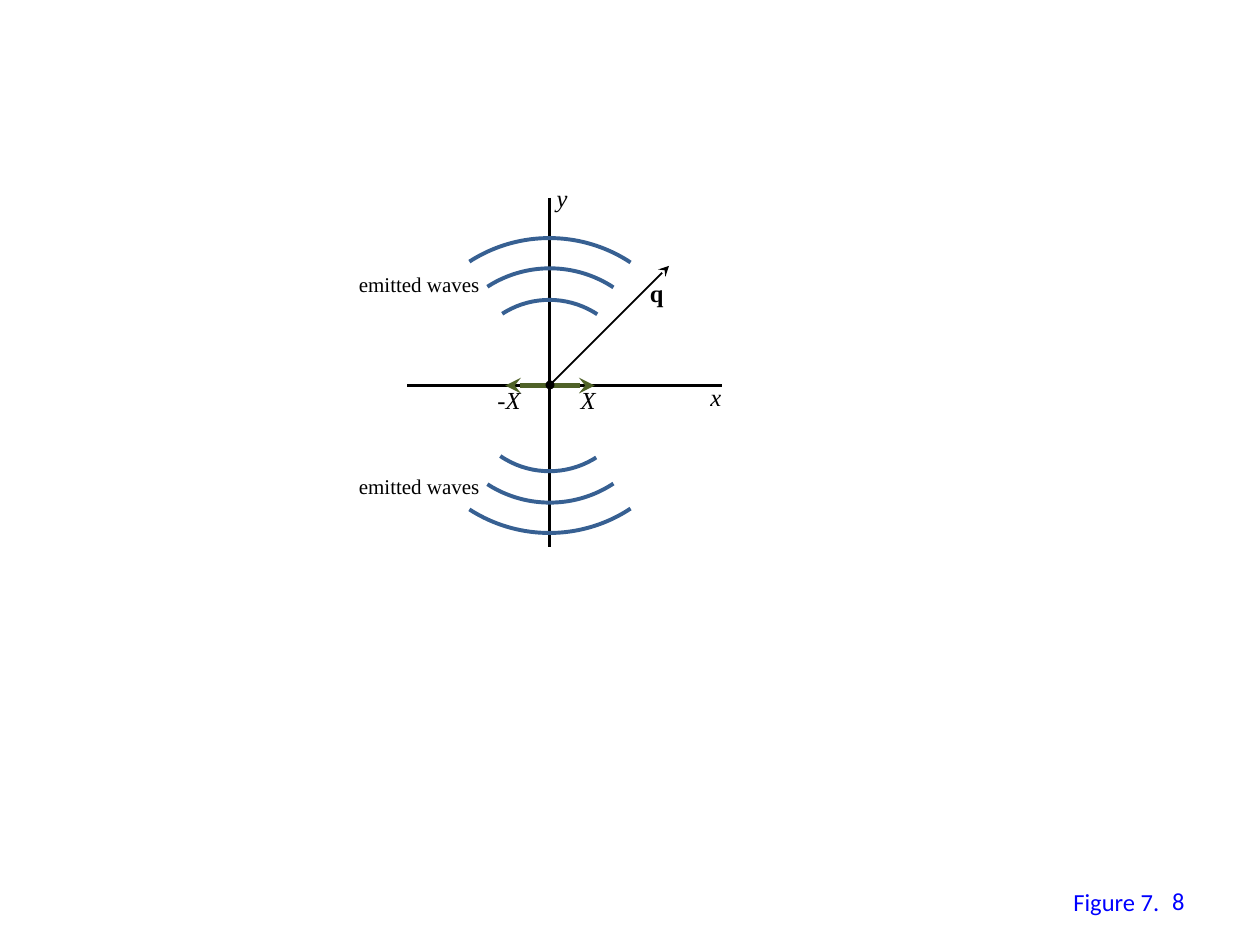
from dataclasses import dataclass

from lxml.etree import SubElement
from pptx import Presentation
from pptx.dml.color import RGBColor
from pptx.enum.shapes import MSO_CONNECTOR as Connector, MSO_SHAPE as Shape
from pptx.enum.text import MSO_ANCHOR as Anchor, MSO_AUTO_SIZE as AutoSize, PP_ALIGN as Align
from pptx.oxml.ns import qn
from pptx.util import Inches, Pt


@dataclass(frozen=True)
class Theme:
    ink: str = "000000"
    wave: str = "376092"
    motion: str = "4F6228"
    caption: str = "0000FF"
    figure_font: str = "Times New Roman"
    caption_font: str = "Calibri"
    label_size: int = 14
    note_size: int = 12


def apply_format(target, values):
    for name, value in values.items():
        setattr(target, name, value)


class FigurePage:
    def __init__(self, page, theme):
        self.page = page
        self.theme = theme

    def stroke(self, line, color, width):
        line.color.rgb = RGBColor.from_string(color)
        line.width = Pt(width)

    def line(self, start, end, color, width, arrows=()):
        """Draw a straight line; arrows names the ends (headEnd, tailEnd) with a tip."""
        connector = self.page.shapes.add_connector(
            Connector.STRAIGHT, *map(Inches, (*start, *end)))
        self.stroke(connector.line, color, width)
        properties = connector._element.spPr
        for arrow in arrows:
            SubElement(properties.find(qn("a:ln")), qn(f"a:{arrow}"), type="stealth")
        SubElement(properties, qn("a:effectLst"))

    def arc(self, left, top, size, start, end, flipped=False):
        """Draw a wave front between two angles in degrees."""
        arc = self.page.shapes.add_shape(Shape.ARC, *map(Inches, (left, top, size, size)))
        arc.shadow.inherit = False
        for index, degrees in enumerate((start, end)):
            arc.adjustments[index] = degrees * 60000 / 100000
        arc.fill.background()
        self.stroke(arc.line, self.theme.wave, 2.25)
        if flipped:
            arc._element.spPr.xfrm.set("flipV", "1")

    def dot(self, left, top, size):
        dot = self.page.shapes.add_shape(Shape.OVAL, *map(Inches, (left, top, size, size)))
        dot.shadow.inherit = False
        dot.fill.solid()
        dot.fill.fore_color.rgb = RGBColor.from_string(self.theme.ink)
        self.stroke(dot.line, self.theme.ink, 1.5)

    def text(self, place, spans, frame=None, align=Align.LEFT, color=None, **font):
        """Add one paragraph; spans are (text, font values) pairs."""
        box = self.page.shapes.add_textbox(*map(Inches, place))
        fit = {"word_wrap": False, "auto_size": AutoSize.SHAPE_TO_FIT_TEXT}
        apply_format(box.text_frame, frame or fit)
        para = box.text_frame.paragraphs[0]
        para.alignment = align
        base = {"name": self.theme.figure_font, "size": Pt(self.theme.label_size)}
        for words, values in spans:
            span = para.add_run()
            span.text = words
            apply_format(span.font, base | font | values)
            span.font.color.rgb = RGBColor.from_string(color or self.theme.ink)


def main():
    deck = Presentation()
    deck.slide_width, deck.slide_height = Inches(10), Inches(7.5)
    theme = Theme()
    figure = FigurePage(deck.slides.add_slide(deck.slide_layouts[6]), theme)
    caption = {"color": theme.caption, "name": theme.caption_font}
    italic, bold = {"italic": True}, {"bold": True}

    figure.text((8.42, 6.99, 0.89, 0.34), [("Figure 7.", {})], **caption)

    # Axes, oscillation and wave vector
    figure.line((5.73, 3.06), (3.23, 3.06), theme.ink, 1.5)
    figure.line((4.36, 1.57), (4.36, 4.34), theme.ink, 1.5)
    figure.line((4.01, 3.06), (4.72, 3.06), theme.motion, 3, ("headEnd", "tailEnd"))
    figure.line((4.35, 3.07), (5.31, 2.11), theme.ink, 1, ("tailEnd",))

    # Wave fronts: upper and lower, from the inside out
    sweep = (237.16, 303.43)
    for left, upper_top, lower_top, size, lower_sweep in (
        (3.67, 2.38, 2.36, 1.38, (235.65, 302.64)),
        (3.45, 2.13, 2.16, 1.83, sweep),
        (3.19, 1.89, 1.89, 2.34, sweep),
    ):
        figure.arc(left, upper_top, size, *sweep)
        figure.arc(left, lower_top, size, *lower_sweep, flipped=True)

    for left, top, width, spans in (
        (4.51, 3.01, 0.38, [("X", italic)]),
        (3.85, 3.01, 0.43, [("-", {}), ("X", italic)]),
        (5.06, 2.16, 0.31, [("q", bold)]),
        (5.54, 2.98, 0.34, [("x", italic)]),
        (4.32, 1.40, 0.34, [("y", italic)]),
    ):
        figure.text((left, top, width, 0.34), spans)
    for top in (2.11, 3.71):
        figure.text((2.75, top, 1.2, 0.3), [("emitted waves", {})], size=Pt(theme.note_size))

    figure.dot(4.34, 3.03, 0.05)
    figure.text((7.17, 6.95, 2.33, 0.4), [("8", {})], align=Align.RIGHT,
                frame={"word_wrap": True, "vertical_anchor": Anchor.MIDDLE}, **caption)

    deck.save("out.pptx")


if __name__ == "__main__":
    main()
